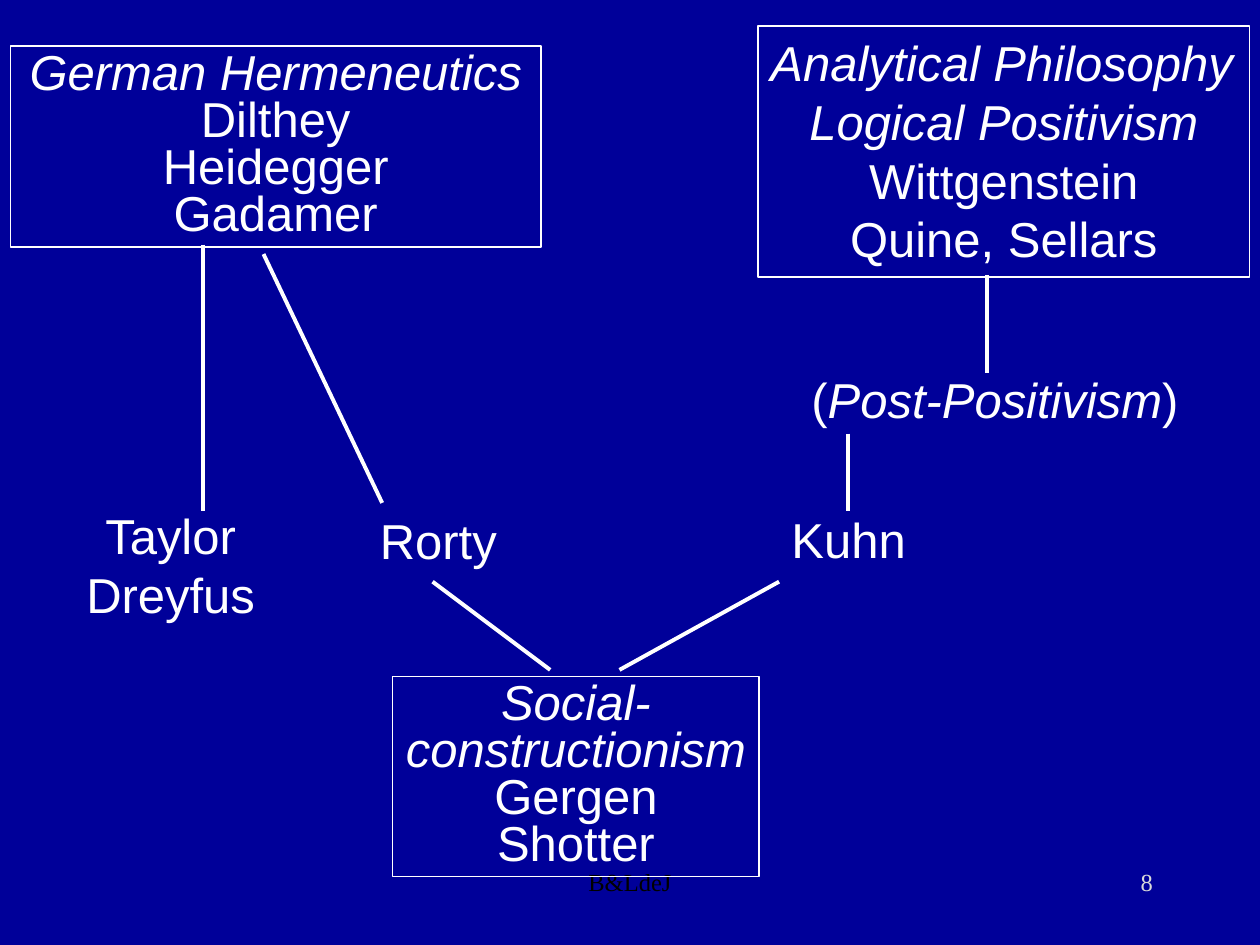
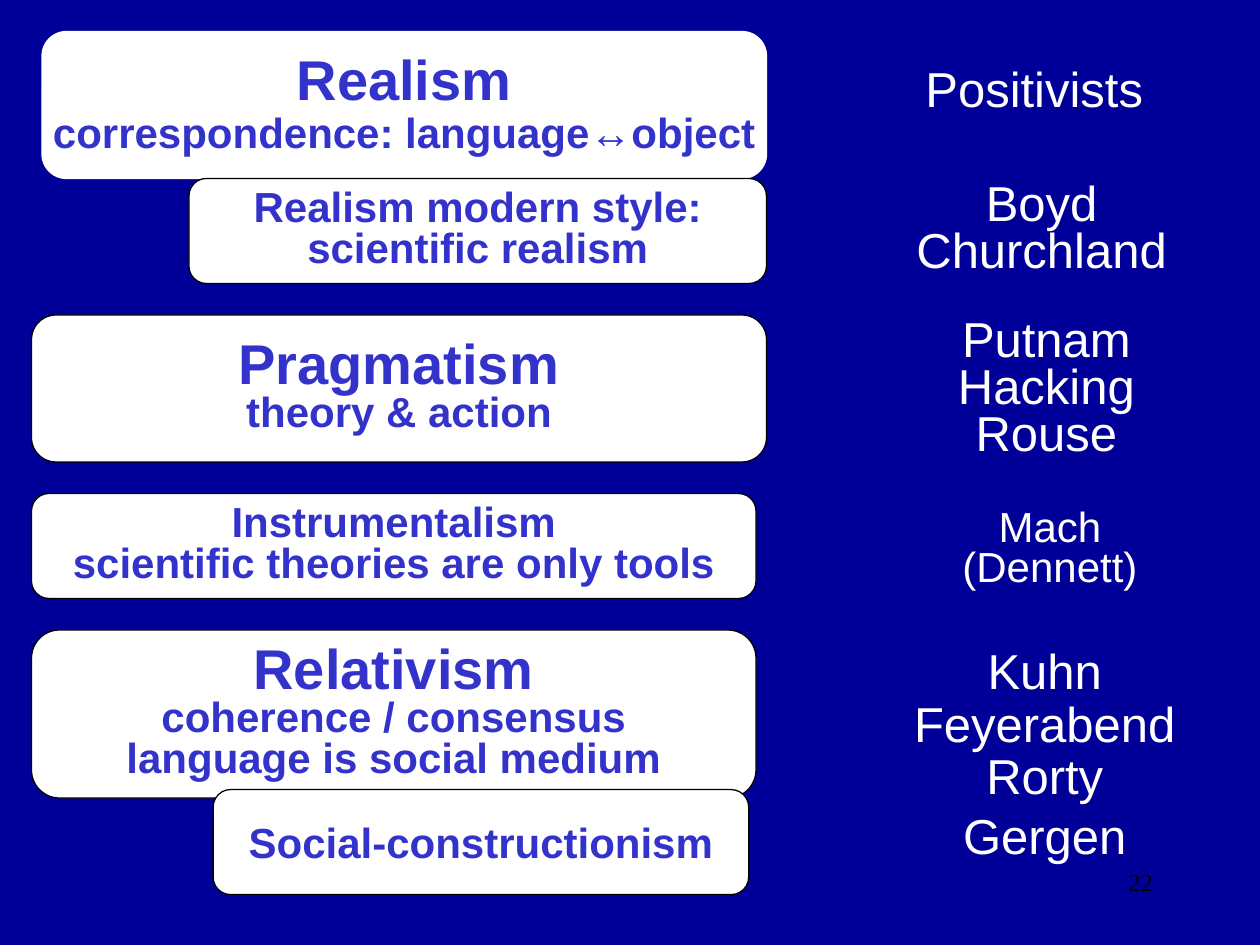
from dataclasses import dataclass
from typing import NamedTuple

from lxml import etree
from pptx import Presentation
from pptx.dml.color import RGBColor
from pptx.enum.shapes import MSO_CONNECTOR, MSO_SHAPE
from pptx.enum.text import MSO_ANCHOR, MSO_AUTO_SIZE, PP_ALIGN
from pptx.oxml.ns import qn
from pptx.util import Inches, Length, Pt

LEFT, CENTER, RIGHT = PP_ALIGN.LEFT, PP_ALIGN.CENTER, PP_ALIGN.RIGHT
TOP, MIDDLE = MSO_ANCHOR.TOP, MSO_ANCHOR.MIDDLE
RECT, ROUNDED = MSO_SHAPE.RECTANGLE, MSO_SHAPE.ROUNDED_RECTANGLE
FIT, FIXED = MSO_AUTO_SIZE.SHAPE_TO_FIT_TEXT, MSO_AUTO_SIZE.NONE
STRAIGHT = MSO_CONNECTOR.STRAIGHT

NAVY = RGBColor(0x00, 0x00, 0x99)
INDIGO = RGBColor(0x33, 0x33, 0xCC)
WHITE = RGBColor(0xFF, 0xFF, 0xFF)
BLACK = RGBColor(0x00, 0x00, 0x00)
PALE = RGBColor(0xD9, 0xD9, 0xD9)

WIDTH, HEIGHT = Inches(10), Inches(7.5)
COLS, ROWS = 120, 90
BLANK_LAYOUT = 6


class Area(NamedTuple):
    """Left, top, width and height in grid columns and rows."""
    col: float
    row: float
    cols: float
    rows: float


class Link(NamedTuple):
    col1: float
    row1: float
    col2: float
    row2: float


class Line(NamedTuple):
    """One paragraph; parts between asterisks are italic."""
    text: str
    size: int = 28
    spacing: float = 1.0
    align: PP_ALIGN = CENTER


@dataclass(frozen=True)
class Style:
    color: RGBColor = WHITE
    font: str = "Arial"
    bold: bool = False
    anchor: MSO_ANCHOR = TOP
    auto_size: MSO_AUTO_SIZE = FIT


@dataclass(frozen=True)
class Block:
    area: Area
    lines: list[Line]
    wrap: bool = True
    border: RGBColor | None = None
    weight: float = 0.75


NAMES = Style()
POSITION = Style(color=INDIGO, bold=True, anchor=MIDDLE, auto_size=FIXED)
FOOTER_AREA = Area(41, 82, 38, 6)
NUMBER_AREA = Area(86, 82, 25, 6)


def lines(*texts: str, size: int = 28, spacing: float = 0.8) -> list[Line]:
    return [Line(text, size, spacing) for text in texts]


def headed(head: str, *texts: str, spacing: float = 0.8) -> list[Line]:
    """A large heading over smaller lines."""
    return [Line(head, 32, spacing), *lines(*texts, size=24, spacing=spacing)]


TRADITIONS = [
    Block(Area(1, 4.4, 50.5, 19.1),
          lines("*German Hermeneutics*", "Dilthey", "Heidegger", "Gadamer"),
          border=WHITE, weight=1),
    Block(Area(37.4, 64.4, 34.9, 19.1),
          lines("*Social-*", "*constructionism*", "Gergen", "Shotter"),
          wrap=False, border=WHITE),
    Block(Area(72.2, 2.5, 46.8, 23.9),
          [Line("*Analytical Philosophy*", align=LEFT),
           *lines("*Logical Positivism*", "Wittgenstein", "Quine, Sellars", spacing=1)],
          border=WHITE, weight=1),
]
FOLLOWERS = [
    Block(Area(35, 48, 13.6, 6.8), [Line("Rorty", align=LEFT)], wrap=False),
    Block(Area(7, 47.6, 18.5, 12.5), lines("Taylor", "Dreyfus", spacing=1)),
    Block(Area(74.2, 47.9, 34.1, 6.8), [Line("Kuhn", align=LEFT)]),
    Block(Area(76.1, 34.6, 38.8, 6.8), [Line("(*Post-Positivism*)", align=LEFT)]),
]
LINKS = [
    Link(19.3, 23.3, 19.3, 48.7),
    Link(25.1, 24.2, 36.4, 47.9),
    Link(41.2, 55.4, 52.4, 63.8),
    Link(74.2, 55.4, 59, 63.8),
    Link(80.8, 41.3, 80.8, 48.7),
    Link(94, 35.5, 94, 26.2),
]
POSITIONS = [
    Block(Area(4, 3, 69, 14),
          headed("Realism", "correspondence: language↔object", spacing=0.9),
          wrap=False, border=WHITE),
    Block(Area(18, 17, 55, 10),
          lines("Realism modern style:", "scientific realism", size=24),
          wrap=False, border=BLACK),
    Block(Area(3, 30, 70, 14), headed("Pragmatism", "theory & action"),
          wrap=False, border=BLACK),
    Block(Area(3, 47, 69, 10),
          lines("Instrumentalism", "scientific theories are only tools", size=24),
          wrap=False, border=BLACK),
    Block(Area(3, 60, 69, 16),
          headed("Relativism", "coherence / consensus", "language is social medium"),
          wrap=False, border=BLACK),
    Block(Area(20.3, 75.2, 51, 10), [Line("Social-constructionism", 24)],
          wrap=False, border=BLACK),
]
THINKERS = [
    Block(Area(80, 5, 37, 6.8), [Line("Positivists")]),
    Block(Area(86, 16.9, 26.4, 10.2), lines("Boyd", "Churchland"), wrap=False),
    Block(Area(90, 29.9, 19.3, 14.6), lines("Putnam", "Hacking", "Rouse"), wrap=False),
    Block(Area(88, 48, 24, 9), lines("Mach", "(Dennett)", size=24)),
    Block(Area(84, 61, 31, 22),
          [*lines("Kuhn", "Feyerabend", "Rorty", spacing=0.9), Line("Gergen")]),
]


def x(col: float) -> Length:
    return Length(round(WIDTH * col / COLS))


def y(row: float) -> Length:
    return Length(round(HEIGHT * row / ROWS))


def place(area: Area) -> tuple[Length, ...]:
    return x(area.col), y(area.row), x(area.cols), y(area.rows)


def apply(target, values: dict) -> None:
    for name, value in values.items():
        setattr(target, name, value)


def write(sp, block: Block, style: Style) -> None:
    tf = sp.text_frame
    apply(tf, {"word_wrap": block.wrap, "auto_size": style.auto_size,
               "vertical_anchor": style.anchor})
    for i, line in enumerate(block.lines):
        p = tf.add_paragraph() if i else tf.paragraphs[0]
        apply(p, {"alignment": line.align, "line_spacing": line.spacing})
        for j, part in enumerate(line.text.split("*")):
            if part:
                r = p.add_run()
                r.text = part
                apply(r.font, {"name": style.font, "size": Pt(line.size),
                               "bold": style.bold, "italic": j % 2 == 1})
                r.font.color.rgb = style.color


def add_text(slide, block: Block, style: Style = NAMES) -> None:
    write(slide.shapes.add_textbox(*place(block.area)), block, style)


def add_box(slide, block: Block, kind: MSO_SHAPE, style: Style,
            fill: RGBColor | None = None) -> None:
    sp = slide.shapes.add_shape(kind, *place(block.area))
    sp.shadow.inherit = False
    if fill is None:
        sp.fill.background()
    else:
        sp.fill.solid()
        sp.fill.fore_color.rgb = fill
    sp.line.color.rgb = block.border
    sp.line.width = Pt(block.weight)
    write(sp, block, style)


def add_link(slide, link: Link) -> None:
    cxn = slide.shapes.add_connector(STRAIGHT, x(link.col1), y(link.row1),
                                     x(link.col2), y(link.row2))
    cxn.line.color.rgb = WHITE
    cxn.line.width = Pt(2.25)
    etree.SubElement(cxn._element.spPr, qn("a:effectLst"))


def add_footer(slide, area: Area, text: str, align: PP_ALIGN, color: RGBColor) -> None:
    add_text(slide, Block(area, [Line(text, 14, align=align)]),
             Style(color=color, font="Times New Roman", auto_size=FIXED))


def new_slide(prs, number: int, color: RGBColor):
    slide = prs.slides.add_slide(prs.slide_layouts[BLANK_LAYOUT])
    add_footer(slide, NUMBER_AREA, str(number), RIGHT, color)
    return slide


def build_lineage(prs) -> None:
    slide = new_slide(prs, 8, PALE)
    add_footer(slide, FOOTER_AREA, "B&LdeJ", CENTER, BLACK)
    for block in TRADITIONS:
        add_box(slide, block, RECT, NAMES)
    for block in FOLLOWERS:
        add_text(slide, block)
    for link in LINKS:
        add_link(slide, link)


def build_positions(prs) -> None:
    slide = new_slide(prs, 22, BLACK)
    for block in POSITIONS:
        add_box(slide, block, ROUNDED, POSITION, WHITE)
    for block in THINKERS:
        add_text(slide, block)


def main() -> None:
    prs = Presentation()
    apply(prs, {"slide_width": WIDTH, "slide_height": HEIGHT})
    background = prs.slide_master.background.fill
    background.solid()
    background.fore_color.rgb = NAVY
    build_lineage(prs)
    build_positions(prs)
    prs.save("out.pptx")


if __name__ == "__main__":
    main()
